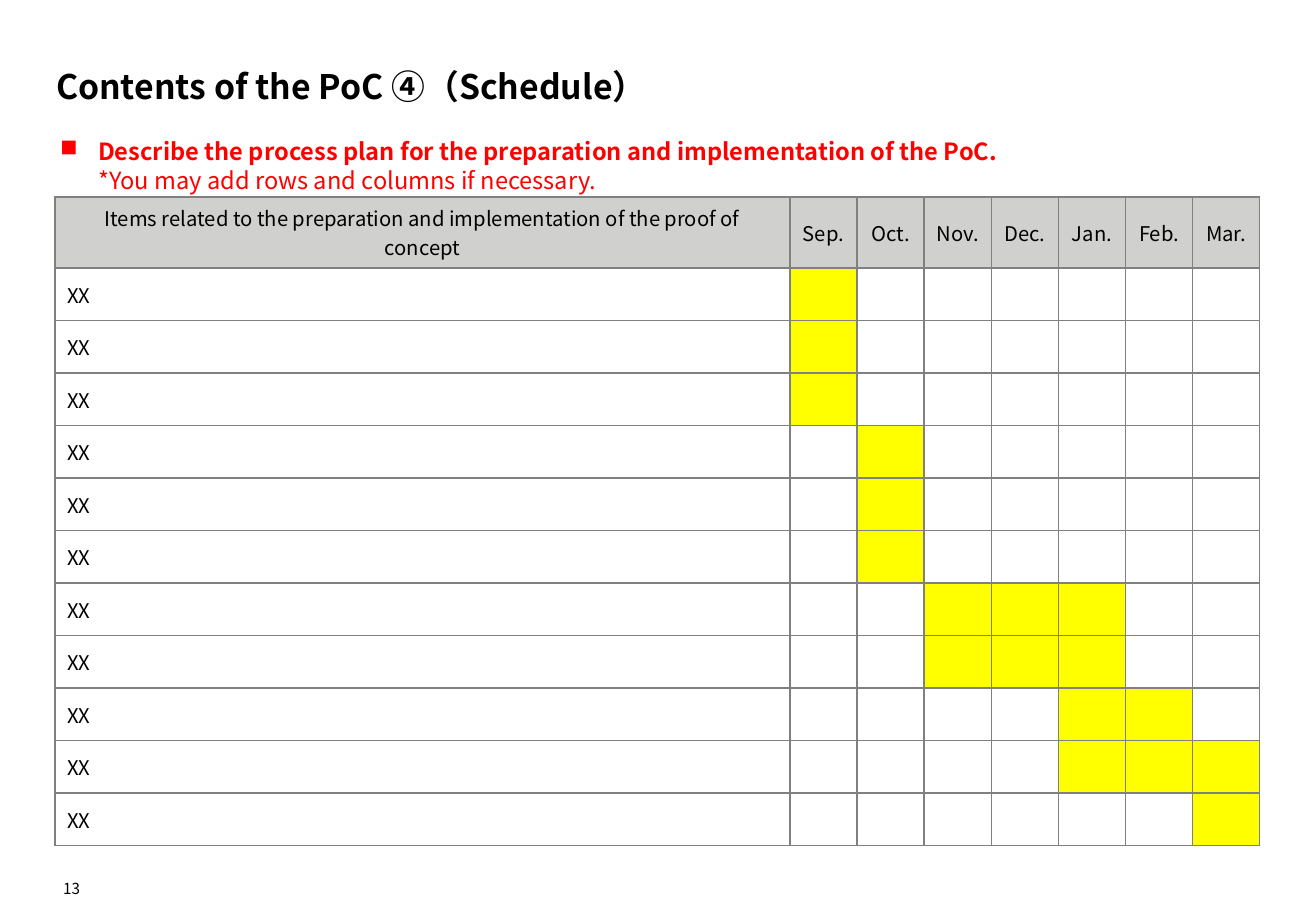
"""Build the proof-of-concept schedule slide."""
from dataclasses import dataclass

import lxml.etree
import pptx
import pptx.dml.color
import pptx.enum.text
import pptx.oxml.ns
import pptx.util

EMU_PER_PX = 7526
FONT_NAME = "Noto Sans CJK JP"
BLACK, RED, WHITE = "000000", "FF0000", "FFFFFF"
YELLOW, HEADER_GREY, BORDER_GREY = "FFFF00", "D0D0CE", "808080"
ALIGN = pptx.enum.text.PP_ALIGN
ANCHOR = pptx.enum.text.MSO_ANCHOR
MONTHS = ["Sep.", "Oct.", "Nov.", "Dec.", "Jan.", "Feb.", "Mar."]
ITEM_HEADING = "Items related to the preparation and implementation of the proof of concept"


@dataclass(frozen=True)
class Label:
    """A text box; each line is its wording and whether it is bold."""

    left: int
    top: int
    width: int
    height: int
    lines: tuple[tuple[str, bool], ...]
    size: int
    color: str = BLACK
    align: ALIGN = ALIGN.LEFT
    anchor: ANCHOR = ANCHOR.BOTTOM
    inset: int = 0
    bullet: str = ""


@dataclass(frozen=True)
class Task:
    """A schedule row with its first and last active month."""

    name: str
    first: str
    last: str


LABELS = [
    Label(56, 875, 24, 23, (("13", False),), 9, align=ALIGN.RIGHT),
    Label(56, 24, 1205, 82, (("Contents of the PoC ④（Schedule）", True),), 20),
    Label(55, 135, 1205, 61, (
        ("Describe the process plan for the preparation and implementation of the PoC.", True),
        ("*You may add rows and columns if necessary.", False),
    ), 14, RED, anchor=ANCHOR.MIDDLE, inset=5, bullet="■"),
]
TASKS = [
    *[Task("XX", "Sep.", "Sep.")] * 3,
    *[Task("XX", "Oct.", "Oct.")] * 3,
    *[Task("XX", "Nov.", "Jan.")] * 2,
    Task("XX", "Jan.", "Feb."),
    Task("XX", "Jan.", "Mar."),
    Task("XX", "Mar.", "Mar."),
]


def px(length: int) -> pptx.util.Emu:
    """Turn px into EMU."""
    return pptx.util.Emu(length * EMU_PER_PX)


def rgb(value: str) -> pptx.dml.color.RGBColor:
    """Turn a hex string into a colour."""
    return pptx.dml.color.RGBColor.from_string(value)


def add_element(parent: lxml.etree._Element, tag: str, **attributes: str) -> lxml.etree._Element:
    """Append a drawing element to its parent."""
    return lxml.etree.SubElement(parent, pptx.oxml.ns.qn(tag), attributes)


def style_font(para: pptx.text.text._Paragraph, size: int, color: str) -> None:
    """Set the font of a whole paragraph."""
    font = para.font
    font.size = pptx.util.Pt(size)
    font.color.rgb = rgb(color)
    font.name = FONT_NAME
    add_element(font._element, "a:ea", typeface=FONT_NAME)


def add_label(page: pptx.slide.Slide, label: Label) -> None:
    """Draw a text box."""
    box = page.shapes.add_textbox(px(label.left), px(label.top), px(label.width), px(label.height))
    frame = box.text_frame
    frame.word_wrap = True
    frame.vertical_anchor = label.anchor
    frame.margin_left = frame.margin_right = px(label.inset)
    frame.margin_top = frame.margin_bottom = px(label.inset)
    para = frame.paragraphs[0]
    para.alignment = label.align
    if label.bullet:
        properties = para._p.get_or_add_pPr()
        properties.set("marL", str(px(38)))
        properties.set("indent", str(px(-38)))
        add_element(properties, "a:buChar", char=label.bullet)
    style_font(para, label.size, label.color)
    for index, (wording, bold) in enumerate(label.lines):
        if index:
            para.add_line_break()
        span = para.add_run()
        span.text = wording
        span.font.bold = bold


def fill_cell(cell: pptx.table._Cell, wording: str, fill: str, align: ALIGN) -> None:
    """Write and style one bordered table cell."""
    cell.text = wording
    cell.vertical_anchor = ANCHOR.MIDDLE
    cell.margin_top = cell.margin_bottom = 0
    para = cell.text_frame.paragraphs[0]
    para.alignment = align
    style_font(para, 12, BLACK)
    properties = cell._tc.get_or_add_tcPr()
    for side in ("a:lnL", "a:lnR", "a:lnT", "a:lnB"):
        line = add_element(properties, side, w=str(pptx.util.Pt(1)))
        add_element(add_element(line, "a:solidFill"), "a:srgbClr", val=BORDER_GREY)
    cell.fill.solid()
    cell.fill.fore_color.rgb = rgb(fill)


def add_schedule(page: pptx.slide.Slide) -> None:
    """Draw the schedule table."""
    item_width, months_width, header_height, tasks_height = 735, 470, 71, 578
    table = page.shapes.add_table(
        len(TASKS) + 1, len(MONTHS) + 1, px(55), px(197),
        px(item_width + months_width), px(header_height + tasks_height),
    ).table
    table.first_row = table.horz_banding = False
    for index, column in enumerate(table.columns):
        column.width = px(months_width) // len(MONTHS) if index else px(item_width)
    for index, row in enumerate(table.rows):
        row.height = px(tasks_height) // len(TASKS) if index else px(header_height)
    for column, heading in enumerate([ITEM_HEADING, *MONTHS]):
        fill_cell(table.cell(0, column), heading, HEADER_GREY, ALIGN.CENTER)
    for row, task in enumerate(TASKS, 1):
        fill_cell(table.cell(row, 0), task.name, WHITE, ALIGN.LEFT)
        active = range(MONTHS.index(task.first), MONTHS.index(task.last) + 1)
        for month in range(len(MONTHS)):
            fill = YELLOW if month in active else WHITE
            fill_cell(table.cell(row, month + 1), "", fill, ALIGN.CENTER)


def main() -> None:
    """Build and save the deck."""
    deck = pptx.Presentation()
    deck.slide_width, deck.slide_height = px(1316), px(911)
    page = deck.slides.add_slide(deck.slide_layouts[6])
    for label in LABELS:
        add_label(page, label)
    add_schedule(page)
    deck.save("out.pptx")


if __name__ == "__main__":
    main()
